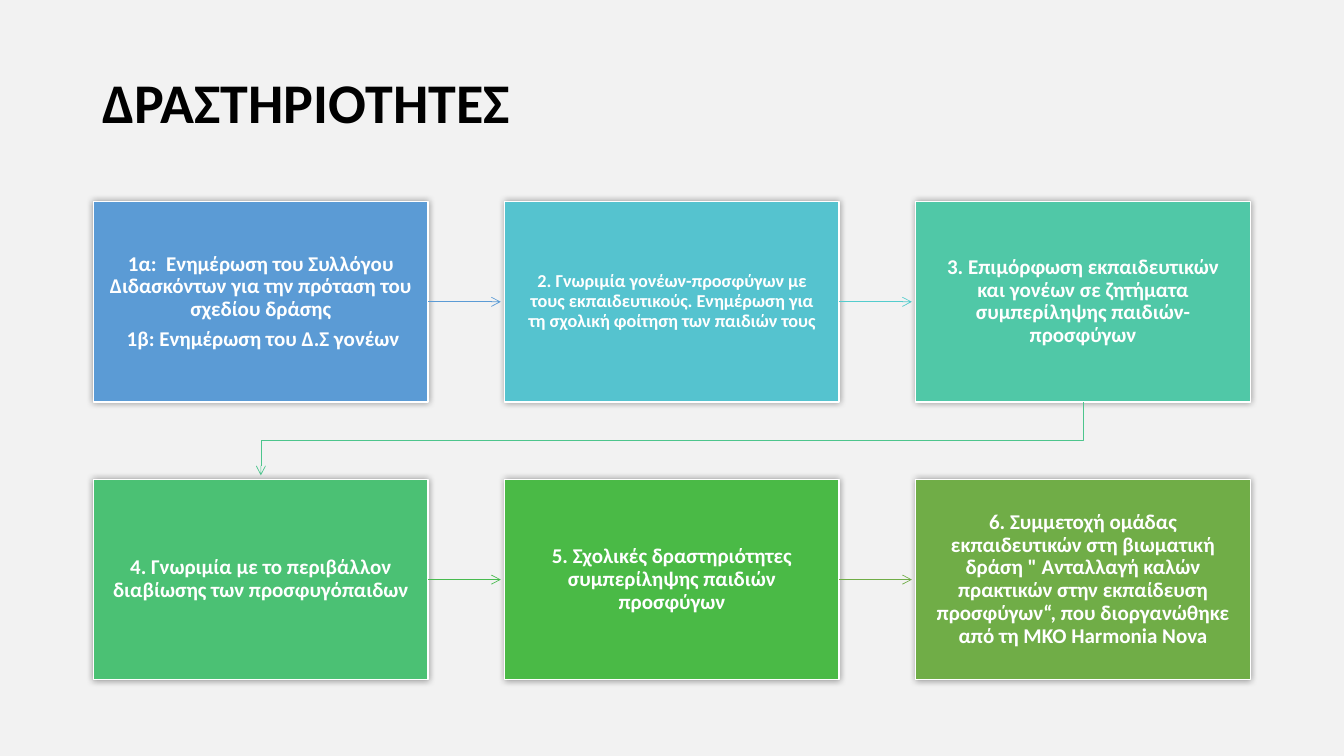
from dataclasses import dataclass

from lxml.etree import SubElement
from pptx import Presentation
from pptx.dml.color import RGBColor
from pptx.enum.shapes import MSO_CONNECTOR, MSO_SHAPE
from pptx.enum.text import MSO_ANCHOR, MSO_AUTO_SIZE, PP_ALIGN
from pptx.oxml import parse_xml
from pptx.oxml.ns import nsdecls, qn
from pptx.shapes.autoshape import Shape
from pptx.shapes.shapetree import SlideShapes
from pptx.text.text import TextFrame
from pptx.util import Cm, Pt


@dataclass(frozen=True)
class Theme:
    font: str = "Calibri"
    back: str = "F2F2F2"
    ink: str = "000000"
    light: str = "FFFFFF"
    head: int = 40
    body: int = 15
    small: int = 13


@dataclass(frozen=True)
class Step:
    lines: tuple[str, ...]
    fill: str
    arrow: str = ""
    size: int = Theme.body


THEME = Theme()
COLS = 3
LEFT, TOP = 2.36, 5.08
WIDTH, HEIGHT = 8.43, 5.05
STEP_X, STEP_Y = 10.36, 7.0
GAP = 0.1

STEPS = (
    Step(("1α:  Ενημέρωση του Συλλόγου Διδασκόντων για την πρόταση του σχεδίου δράσης",
          " 1β: Ενημέρωση του Δ.Σ γονέων"), "5B9BD5", "5B9BD5"),
    Step(("2. Γνωριμία γονέων-προσφύγων με τους εκπαιδευτικούς. Ενημέρωση για "
          "τη σχολική φοίτηση των παιδιών τους",), "55C3CF", "54CCCD", THEME.small),
    Step(("3. Επιμόρφωση εκπαιδευτικών και γονέων σε ζητήματα συμπερίληψης "
          "παιδιών-προσφύγων",), "50C8A7", "4DC58D"),
    Step(("4. Γνωριμία με το περιβάλλον διαβίωσης των προσφυγόπαιδων",), "4BC174", "48BB4F"),
    Step(("5. Σχολικές δραστηριότητες συμπερίληψης παιδιών προσφύγων",), "4ABA46", "70AD47"),
    Step(("6. Συμμετοχή ομάδας εκπαιδευτικών στη βιωματική δράση \" Ανταλλαγή καλών "
          "πρακτικών στην εκπαίδευση προσφύγων“, που διοργανώθηκε από τη ΜΚΟ "
          "Harmonia Nova",), "70AD47"),
)


def shade(blur: float, dist: float):
    return parse_xml(
        f'<a:effectLst {nsdecls("a")}><a:outerShdw blurRad="{Pt(blur)}" dist="{Pt(dist)}" '
        'dir="2700000" algn="ctr" rotWithShape="0"><a:srgbClr val="000000">'
        '<a:alpha val="40000"/></a:srgbClr></a:outerShdw></a:effectLst>')


def write(frame: TextFrame, lines: tuple[str, ...], *, size: int, color: str,
          align: PP_ALIGN, after: float = 0, shadow: bool = False) -> None:
    frame.word_wrap = True
    frame.auto_size = MSO_AUTO_SIZE.NONE
    frame.vertical_anchor = MSO_ANCHOR.MIDDLE
    for i, line in enumerate(lines):
        para = frame.add_paragraph() if i else frame.paragraphs[0]
        para.alignment = align
        para.line_spacing = 0.9
        para.space_after = Pt(after)
        run = para.add_run()
        run.text = line
        font = run.font
        font.size, font.bold = Pt(size), True
        font.color.rgb = RGBColor.from_string(color)
        if shadow:
            run._r.rPr.find(qn("a:solidFill")).addnext(shade(3, 3))
        font.name = THEME.font


def point(shape, color: str) -> None:
    shape.line.color.rgb = RGBColor.from_string(color)
    shape.line.width = Pt(0.5)
    SubElement(shape.line._get_or_add_ln(), qn("a:tailEnd"), type="arrow")


def place(i: int) -> tuple[float, float]:
    row, col = divmod(i, COLS)
    return LEFT + col * STEP_X, TOP + row * STEP_Y


def card(shapes: SlideShapes, step: Step, i: int) -> Shape:
    x, y = place(i)
    box = shapes.add_shape(MSO_SHAPE.RECTANGLE, Cm(x), Cm(y), Cm(WIDTH), Cm(HEIGHT))
    box.fill.solid()
    box.fill.fore_color.rgb = RGBColor.from_string(step.fill)
    box.line.color.rgb = RGBColor.from_string(THEME.light)
    box.line.width = Pt(1)
    box._element.spPr.append(shade(5, 0))
    frame = box.text_frame
    frame.margin_left = frame.margin_right = Cm(0.41)
    frame.margin_top = frame.margin_bottom = Cm(0.43)
    write(frame, step.lines, size=step.size, color=THEME.light,
          align=PP_ALIGN.CENTER, after=5)
    return box


def across(shapes: SlideShapes, box: Shape, i: int, color: str) -> None:
    x, y = place(i)
    mid = Cm(y + HEIGHT / 2)
    link = shapes.add_connector(MSO_CONNECTOR.STRAIGHT, Cm(x + WIDTH), mid,
                                Cm(x + STEP_X - GAP), mid)
    link.begin_connect(box, 3)
    point(link, color)
    SubElement(link._element.spPr, qn("a:effectLst"))


def wrap(shapes: SlideShapes, i: int, color: str) -> None:
    (x, y), (end, low) = place(i), place(i + 1)
    start, end = Cm(x + WIDTH / 2), Cm(end + WIDTH / 2)
    bend = Cm((y + HEIGHT + low) / 2)
    path = shapes.build_freeform(start, Cm(y + HEIGHT))
    path.add_line_segments([(start, bend), (end, bend), (end, Cm(low - GAP))], close=False)
    link = path.convert_to_shape()
    link.fill.background()
    link.shadow.inherit = False
    point(link, color)


def main() -> None:
    deck = Presentation()
    deck.slide_width, deck.slide_height = Cm(33.87), Cm(19.05)
    slide = deck.slides.add_slide(deck.slide_layouts[5])
    slide.background.fill.solid()
    slide.background.fill.fore_color.rgb = RGBColor.from_string(THEME.back)
    shapes = slide.shapes
    title = shapes.title
    title.left, title.top, title.width, title.height = Cm(2.33), Cm(1.01), Cm(29.21), Cm(3.3)
    write(title.text_frame, ("ΔΡΑΣΤΗΡΙΟΤΗΤΕΣ",), size=THEME.head, color=THEME.ink,
          align=PP_ALIGN.LEFT, shadow=True)
    for i, step in enumerate(STEPS):
        box = card(shapes, step, i)
        if not step.arrow:
            continue
        if (i + 1) % COLS:
            across(shapes, box, i, step.arrow)
        else:
            wrap(shapes, i, step.arrow)
    deck.save("out.pptx")


if __name__ == "__main__":
    main()
